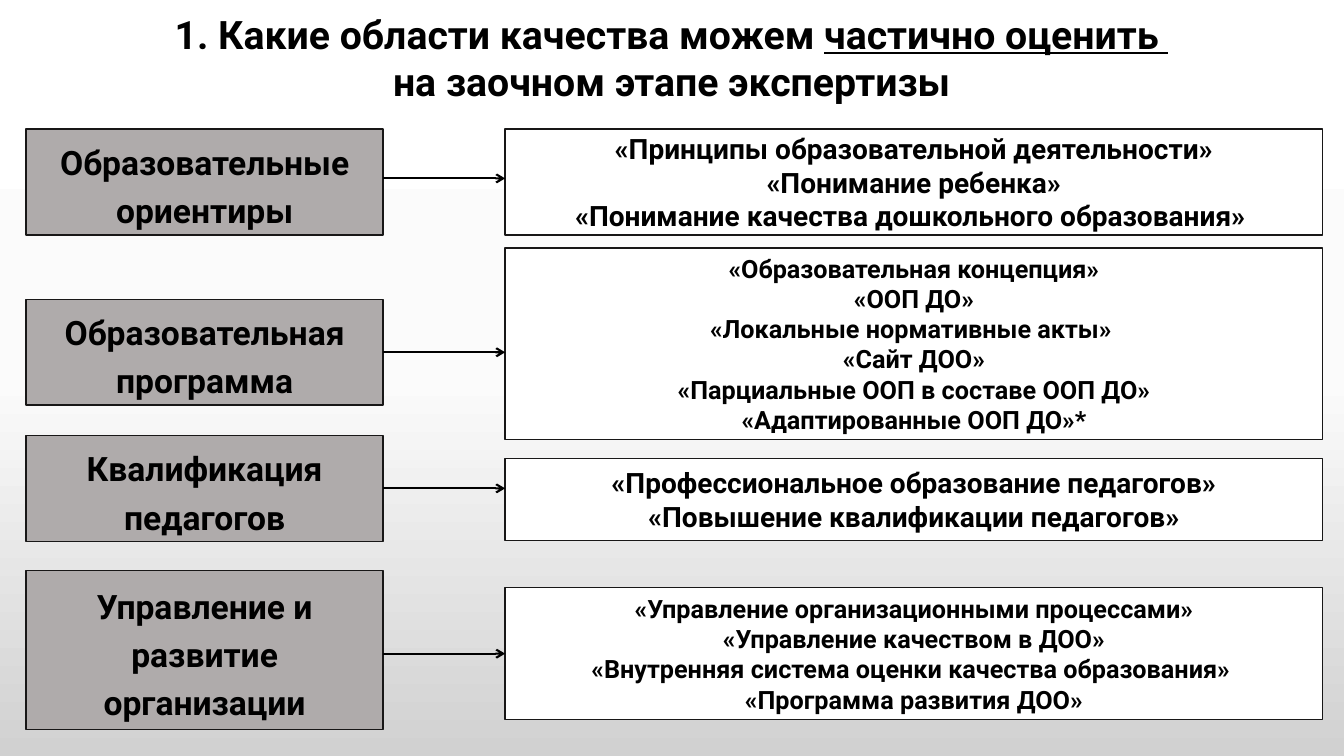
from copy import deepcopy

from lxml import etree
from pptx import Presentation
from pptx import util as u
from pptx.dml.color import RGBColor
from pptx.enum import shapes, text
from pptx.oxml.ns import qn

PX = 9144  # one px is a hundredth of an inch
COLOURS = {"ink": "000000", "area": "AFABAB", "detail": "FFFFFF", "border": "181717"}
BACKDROP = [(0, "FFFFFF"), (0.5, "FBFBFB"), (1, "D1D1D1")]
TITLE = [
    [("1. Какие области качества можем ", False), ("частично оценить ", True)],
    [("на заочном этапе экспертизы", False)],
]
AREA_X, AREA_WIDTH = 26, 354
DETAIL_X, DETAIL_WIDTH = 501, 811
JOIN_TOLERANCE = 2

# area name, its top and height, arrow height, detail top and height, text size, details
ROWS = [
    ("Образовательные ориентиры", 128, 105, 177, 128, 105, 20, [
        "«Принципы образовательной деятельности»",
        "«Понимание ребенка»",
        "«Понимание качества дошкольного образования» "]),
    ("Образовательная программа", 297, 105, 349, 246, 190, 18, [
        "«Образовательная концепция»",
        "«ООП ДО»",
        "«Локальные нормативные акты» ",
        "«Сайт ДОО»",
        "«Парциальные ООП в составе ООП ДО»",
        "«Адаптированные ООП ДО»*"]),
    ("Квалификация педагогов", 432, 105, 486, 455, 81, 20, [
        "«Профессиональное образование педагогов»",
        "«Повышение квалификации педагогов»"]),
    ("Управление и развитие организации", 566, 158, 650, 583, 131, 18, [
        "«Управление организационными процессами»",
        "«Управление качеством в ДОО»",
        "«Внутренняя система оценки качества образования» ",
        "«Программа развития ДОО»"]),
]


def rgb(name):
    return RGBColor.from_string(COLOURS[name])


def apply(target, values):
    for name, value in values.items():
        setattr(target, name, value)


class Slide:
    """Holds the text style and the page being built."""

    font = {"name": "Roboto", "bold": True}

    def __init__(self, deck):
        self.page = deck.slides.add_slide(deck.slide_layouts[5])

    def backdrop(self):
        fill = self.page.background.fill
        fill.gradient()
        fill.gradient_angle = 270
        stop_list = next(self.page.element.iter(qn("a:gsLst")))
        stop_list.append(deepcopy(stop_list[-1]))
        for stop, (position, colour) in zip(fill.gradient_stops, BACKDROP):
            stop.position = position
            stop.color.rgb = RGBColor.from_string(colour)

    def set_lines(self, frame, lines, size, spacing=1.0):
        """Fill a frame with lines, each a list of (words, underlined)."""
        apply(frame, {"word_wrap": True, "auto_size": text.MSO_AUTO_SIZE.NONE,
                      "vertical_anchor": text.MSO_ANCHOR.MIDDLE})
        for index, line in enumerate(lines):
            para = frame.paragraphs[0] if index == 0 else frame.add_paragraph()
            apply(para, {"alignment": text.PP_ALIGN.CENTER, "line_spacing": spacing})
            for words, underlined in line:
                span = para.add_run()
                span.text = words
                apply(span.font, {**self.font, "size": u.Pt(size)})
                span.font.color.rgb = rgb("ink")
                if underlined:
                    span.font.underline = True

    def title(self, lines, left, top, width, height):
        box = self.page.shapes.title
        apply(box, {"left": left * PX, "top": top * PX,
                    "width": width * PX, "height": height * PX})
        self.set_lines(box.text_frame, lines, 28)

    def box(self, lines, left, top, width, height, fill, size, spacing=1.0):
        box = self.page.shapes.add_shape(
            shapes.MSO_SHAPE.RECTANGLE, left * PX, top * PX, width * PX, height * PX)
        box.shadow.inherit = False
        box.fill.solid()
        box.fill.fore_color.rgb = rgb(fill)
        box.line.color.rgb = rgb("border")
        box.line.width = u.Pt(1)
        self.set_lines(box.text_frame, [[(line, False)] for line in lines], size, spacing)
        return box

    def arrow(self, area, detail, y):
        """Draw a level arrow, joined to a box whose middle it meets."""
        arrow = self.page.shapes.add_connector(
            shapes.MSO_CONNECTOR.STRAIGHT, area.left + area.width, y * PX, detail.left, y * PX)
        arrow.line.color.rgb = rgb("ink")
        arrow.line.width = u.Pt(1.5)
        properties = arrow._element.spPr
        etree.SubElement(properties.find(qn("a:ln")), qn("a:tailEnd"), type="arrow")
        etree.SubElement(properties, qn("a:effectLst"))

        def meets(box):
            return abs(box.top + box.height / 2 - y * PX) <= JOIN_TOLERANCE * PX

        if meets(area):
            arrow.begin_connect(area, 3)
            arrow.end_y = arrow.begin_y
        elif meets(detail):
            arrow.end_connect(detail, 1)
            arrow.begin_y = arrow.end_y


def main():
    deck = Presentation()
    apply(deck, {"slide_width": 1333 * PX, "slide_height": 750 * PX})
    slide = Slide(deck)
    slide.backdrop()
    slide.title(TITLE, 50, 0, 1232, 113)
    for name, top, height, arrow_y, detail_top, detail_height, size, details in ROWS:
        area = slide.box([name], AREA_X, top, AREA_WIDTH, height, "area", 24, 1.2)
        detail = slide.box(details, DETAIL_X, detail_top, DETAIL_WIDTH, detail_height,
                           "detail", size)
        slide.arrow(area, detail, arrow_y)
    deck.save("out.pptx")


if __name__ == "__main__":
    main()
